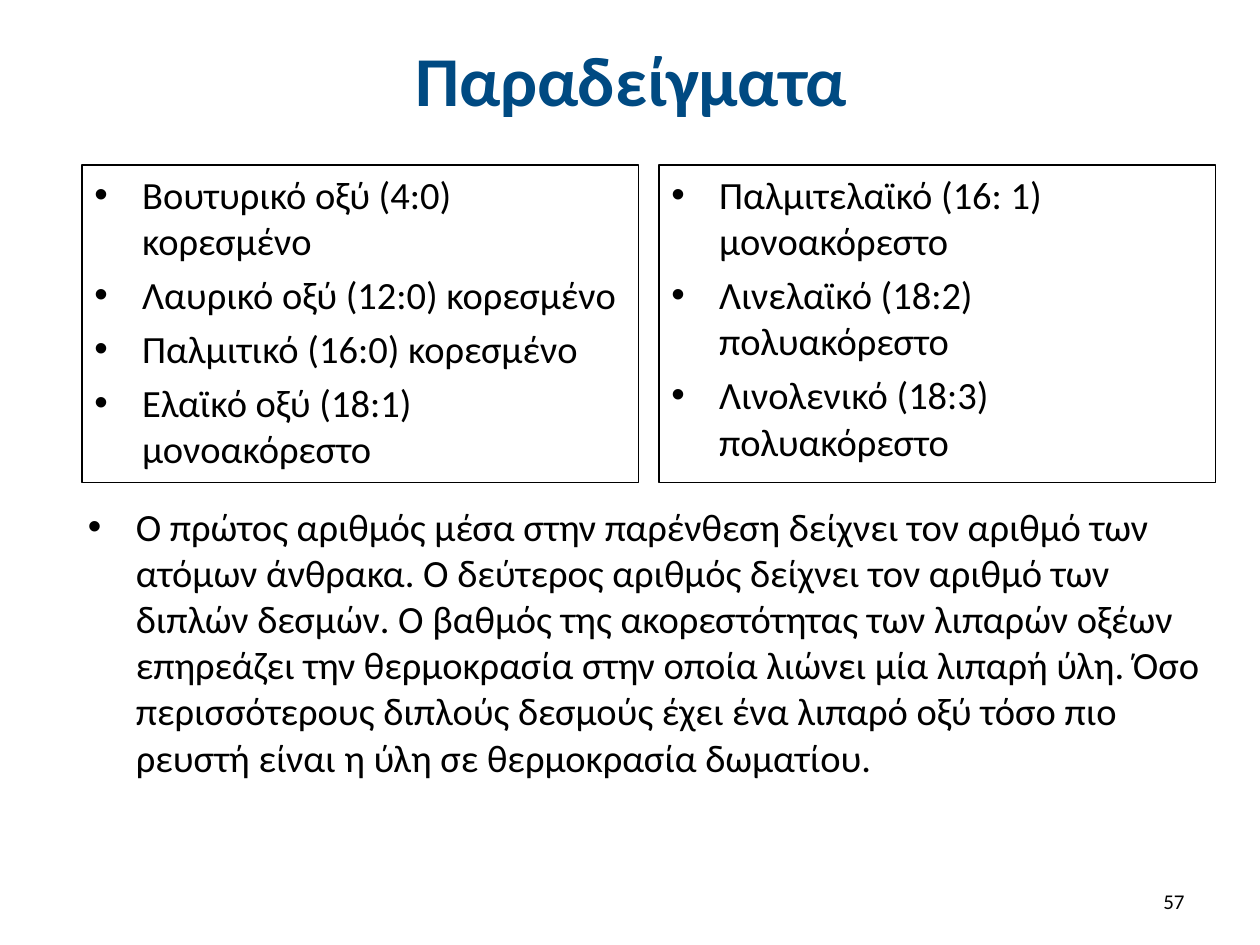
from lxml import etree
from pptx import Presentation, util as u
from pptx.dml.color import RGBColor
from pptx.enum import text as t
from pptx.oxml import ns

WIDE, HIGH = 10, 7.5
INK, BLUE = "000000", "004A82"
SIDE, GAP, TOP = 0.65, 0.16, 1.31
COL, ROW = 4.42, 2.52
LISTS = [
    ["Βουτυρικό οξύ (4:0) κορεσμένο", "Λαυρικό οξύ (12:0) κορεσμένο",
     "Παλμιτικό (16:0) κορεσμένο", "Ελαϊκό οξύ (18:1) μονοακόρεστο"],
    ["Παλμιτελαϊκό (16: 1) μονοακόρεστο", "Λινελαϊκό (18:2) πολυακόρεστο",
     "Λινολενικό (18:3) πολυακόρεστο"],
]
NOTE = (
    "Ο πρώτος αριθμός μέσα στην παρένθεση δείχνει τον αριθμό των ατόμων άνθρακα. "
    "Ο δεύτερος αριθμός δείχνει τον αριθμό των διπλών δεσμών. "
    "Ο βαθμός της ακορεστότητας των λιπαρών οξέων επηρεάζει την θερμοκρασία "
    "στην οποία λιώνει μία λιπαρή ύλη. Όσο περισσότερους διπλούς δεσμούς έχει "
    "ένα λιπαρό οξύ τόσο πιο ρευστή είναι η ύλη σε θερμοκρασία δωματίου."
)


def hue(code):
    """Turn a hex string into a colour."""
    return RGBColor.from_string(code)


def style(para, size, code=INK, bold=False):
    """Set the font of a paragraph's runs."""
    for run in para.runs:
        font = run.font
        font.name, font.size, font.bold = "Calibri", u.Pt(size), bold
        font.color.rgb = hue(code)


def add_box(slide, box):
    """Add an empty wrapping text box."""
    shape = slide.shapes.add_textbox(*map(u.Inches, box))
    shape.text_frame.word_wrap = True
    return shape


def add_line(slide, box, words, size, align, code=INK, bold=False):
    """Add one line of text, centred in the height of its box."""
    frame = add_box(slide, box).text_frame
    frame.vertical_anchor = t.MSO_ANCHOR.MIDDLE
    frame.text = words
    para = frame.paragraphs[0]
    para.alignment = align
    style(para, size, code, bold)


def add_list(slide, box, items, edge=False):
    """Add a bulleted list, with an outline if edge is set."""
    shape = add_box(slide, box)
    if edge:
        shape.line.color.rgb = hue(INK)
        shape.line.width = u.Pt(0.75)
    frame = shape.text_frame
    frame.text = "\n".join(items)
    for i, para in enumerate(frame.paragraphs):
        props = para._p.get_or_add_pPr()
        props.set("marL", str(u.Inches(0.38)))
        props.set("indent", str(u.Inches(-0.38)))
        face = etree.SubElement(props, ns.qn("a:buFont"))
        face.set("typeface", "Arial")
        etree.SubElement(props, ns.qn("a:buChar")).set("char", "•")
        para.space_before = u.Pt(4.4 if i else 0)
        style(para, 22)


def main():
    """Build the slide and save it."""
    deck = Presentation()
    deck.slide_width, deck.slide_height = u.Inches(WIDE), u.Inches(HIGH)
    slide = deck.slides.add_slide(deck.slide_layouts[6])
    add_line(slide, (0.51, 0.13, 9, 0.99), "Παραδείγματα", 40,
             t.PP_ALIGN.CENTER, BLUE, True)
    for i, items in enumerate(LISTS):
        add_list(slide, (SIDE + i * (COL + GAP), TOP, COL, ROW), items, True)
    add_list(slide, (0.6, 3.94, 9.13, 2.77), [NOTE])
    add_line(slide, (7.17, 6.95, 2.33, 0.4), "57", 12, t.PP_ALIGN.RIGHT)
    deck.save("out.pptx")


if __name__ == "__main__":
    main()
